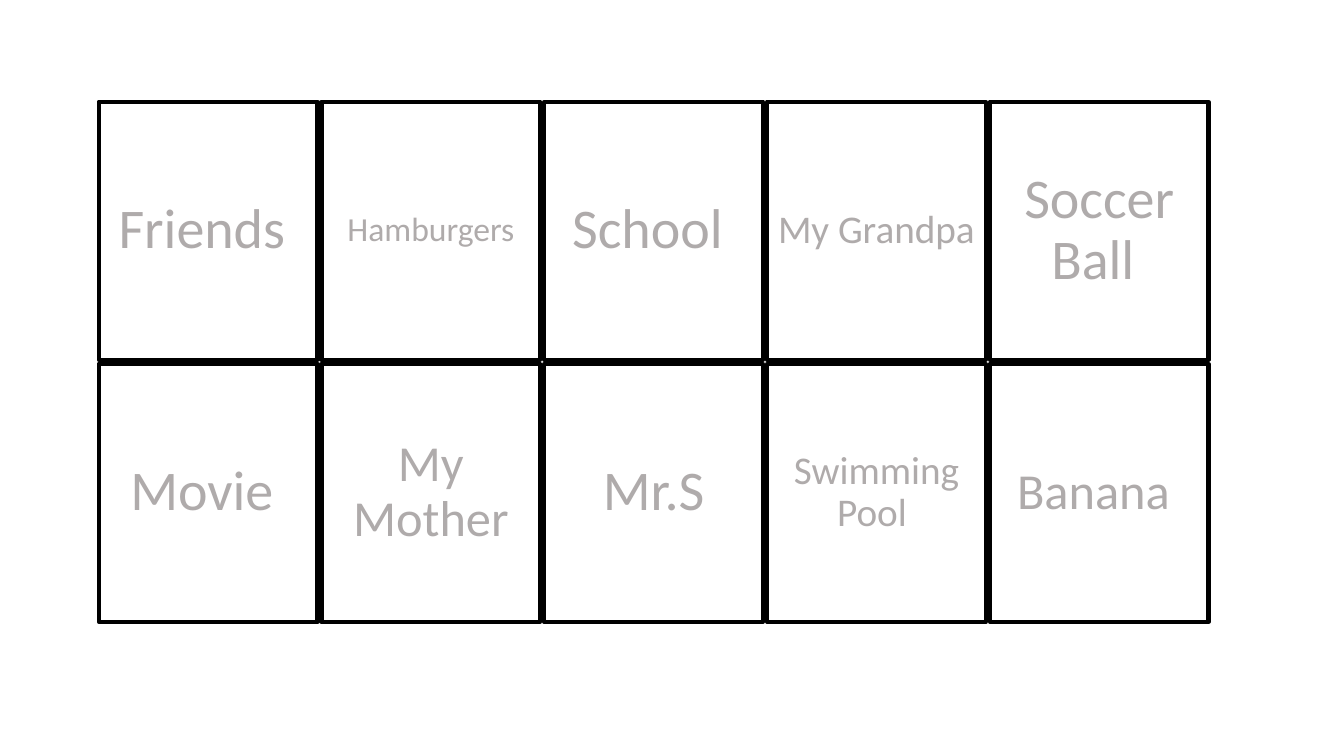
from dataclasses import dataclass

from pptx import Presentation
from pptx.dml.color import RGBColor
from pptx.enum.shapes import MSO_SHAPE
from pptx.enum.text import MSO_ANCHOR, PP_ALIGN
from pptx.slide import Slide
from pptx.util import Pt

BLACK = RGBColor(0x00, 0x00, 0x00)
GREY = RGBColor(0xAF, 0xAB, 0xAB)

COLUMNS = 5
GRID_LEFT, GRID_TOP = 70.56, 72.72
CARD_WIDTH, CARD_HEIGHT = 156.24, 184.32
COLUMN_PITCH, ROW_PITCH = 159.12, 187.2

FRAME_FORMAT = {"word_wrap": True, "vertical_anchor": MSO_ANCHOR.MIDDLE}
PARAGRAPH_FORMAT = {"alignment": PP_ALIGN.CENTER, "line_spacing": 0.9}


@dataclass(frozen=True)
class WordCard:
    text: str
    size: float = 40


WORD_CARDS = [
    WordCard("Friends "),
    WordCard("Hamburgers", 24),
    WordCard("School "),
    WordCard("My Grandpa ", 28),
    WordCard("Soccer Ball "),
    WordCard("Movie "),
    WordCard("My Mother", 36),
    WordCard("Mr.S"),
    WordCard("Swimming Pool ", 28),
    WordCard("Banana ", 36),
]


def apply_format(target: object, values: dict[str, object]) -> None:
    for name, value in values.items():
        setattr(target, name, value)


def draw_card(slide: Slide, card: WordCard, row: int, column: int) -> None:
    shape = slide.shapes.add_shape(
        MSO_SHAPE.RECTANGLE,
        Pt(GRID_LEFT + column * COLUMN_PITCH),
        Pt(GRID_TOP + row * ROW_PITCH),
        Pt(CARD_WIDTH),
        Pt(CARD_HEIGHT),
    )
    shape.shadow.inherit = False
    shape.fill.background()
    shape.line.color.rgb = BLACK
    shape.line.width = Pt(3)
    apply_format(shape.text_frame, FRAME_FORMAT)
    paragraph = shape.text_frame.paragraphs[0]
    apply_format(paragraph, PARAGRAPH_FORMAT)
    run = paragraph.add_run()
    run.text = card.text
    apply_format(run.font, {"name": "Calibri", "size": Pt(card.size)})
    run.font.color.rgb = GREY


def main() -> None:
    presentation = Presentation()
    apply_format(presentation, {"slide_width": Pt(960), "slide_height": Pt(540)})
    slide = presentation.slides.add_slide(presentation.slide_layouts[6])
    for index, card in enumerate(WORD_CARDS):
        draw_card(slide, card, *divmod(index, COLUMNS))
    presentation.save("out.pptx")


if __name__ == "__main__":
    main()
